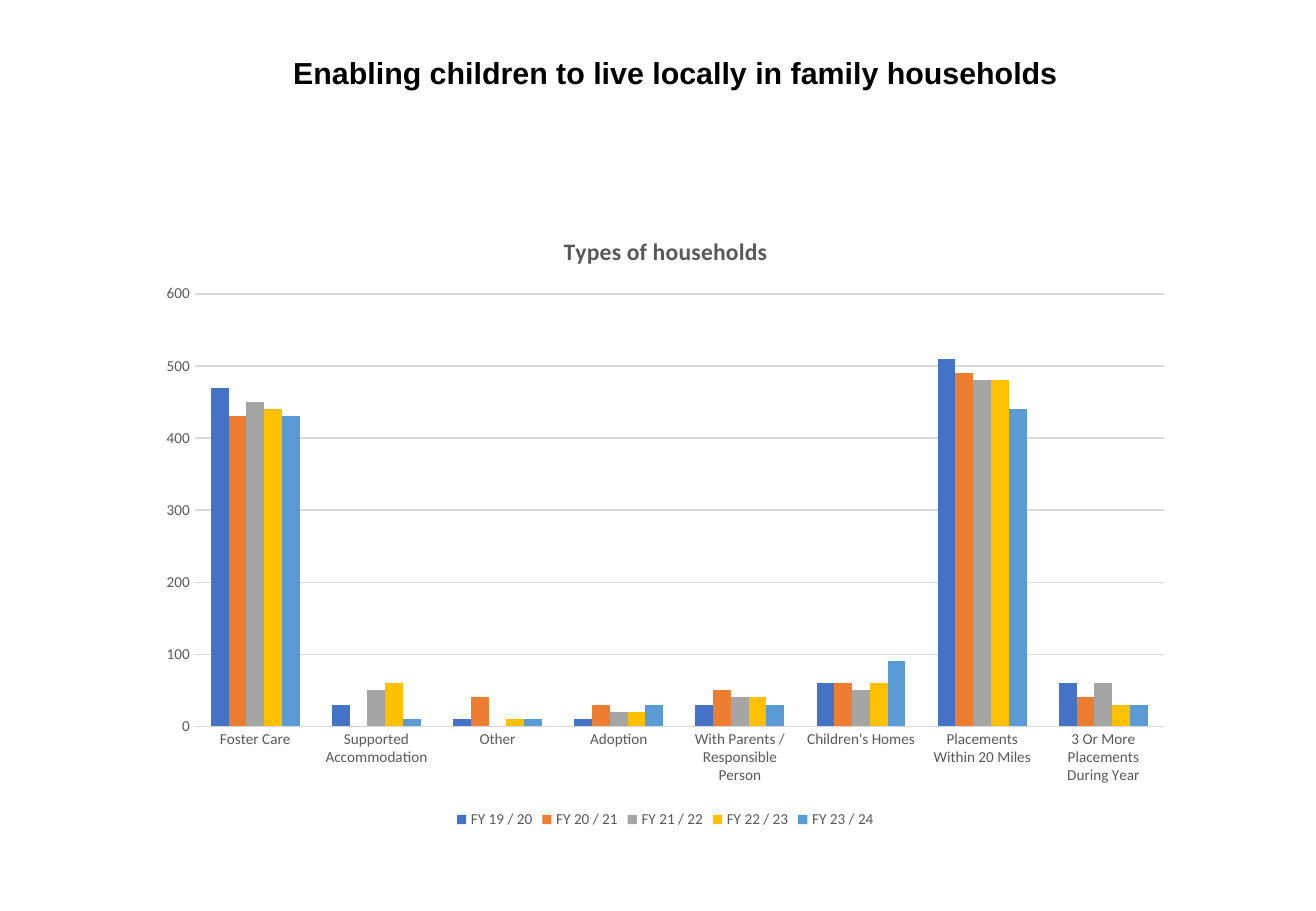
from dataclasses import dataclass

from pptx import Presentation
from pptx.chart.chart import Chart
from pptx.chart.data import CategoryChartData
from pptx.dml.color import RGBColor
from pptx.enum.chart import XL_CHART_TYPE, XL_LEGEND_POSITION, XL_TICK_MARK
from pptx.enum.text import MSO_ANCHOR, MSO_AUTO_SIZE, PP_ALIGN
from pptx.oxml import parse_xml
from pptx.oxml.ns import nsdecls, qn
from pptx.slide import Slide
from pptx.text.text import Font, TextFrame
from pptx.util import Inches, Pt

SLIDE_WIDTH = Inches(10.83)
SLIDE_HEIGHT = Inches(7.5)

BLACK = RGBColor(0x00, 0x00, 0x00)
GREY_TEXT = RGBColor(0x59, 0x59, 0x59)
GREY_LINE = RGBColor(0xD9, 0xD9, 0xD9)
BLUE = RGBColor(0x44, 0x72, 0xC4)
ORANGE = RGBColor(0xED, 0x7D, 0x31)
GREY = RGBColor(0xA5, 0xA5, 0xA5)
GOLD = RGBColor(0xFF, 0xC0, 0x00)
SKY = RGBColor(0x5B, 0x9B, 0xD5)


@dataclass(frozen=True)
class Area:
    left: float
    top: float
    width: float = 0
    height: float = 0

    def on_slide(self) -> tuple[int, int, int, int]:
        return (
            int(SLIDE_WIDTH * self.left / 100),
            int(SLIDE_HEIGHT * self.top / 100),
            int(SLIDE_WIDTH * self.width / 100),
            int(SLIDE_HEIGHT * self.height / 100),
        )


@dataclass(frozen=True)
class YearSeries:
    name: str
    color: RGBColor
    values: tuple[int, ...]


TITLE_AREA = Area(1.75, 5.33, 82.64, 5.33)
CHART_AREA = Area(11.08, 23.07, 78.95, 68.4)
CHART_TITLE_AREA = Area(39.8, 3.2)
PLOT_AREA = Area(4.7, 13.45, 93.3, 69.4)

HOUSEHOLDS = (
    "Foster Care",
    "Supported Accommodation",
    "Other",
    "Adoption",
    "With Parents / Responsible Person",
    "Children's Homes",
    "Placements Within 20 Miles",
    "3 Or More Placements During Year",
)
YEARS = (
    YearSeries("FY 19 / 20", BLUE, (470, 30, 10, 10, 30, 60, 510, 60)),
    YearSeries("FY 20 / 21", ORANGE, (430, 0, 40, 30, 50, 60, 490, 40)),
    YearSeries("FY 21 / 22", GREY, (450, 50, 0, 20, 40, 50, 480, 60)),
    YearSeries("FY 22 / 23", GOLD, (440, 60, 10, 20, 40, 60, 480, 30)),
    YearSeries("FY 23 / 24", SKY, (430, 10, 10, 30, 30, 90, 440, 30)),
)


def format_font(font: Font, *, name: str = "Calibri", size: float = 9,
                color: RGBColor = GREY_TEXT, bold: bool = False) -> None:
    font.name = name
    font.size = Pt(size)
    font.bold = bold
    font.color.rgb = color


def write_text(frame: TextFrame, text: str, *, name: str = "Calibri",
               size: float = 9, color: RGBColor = GREY_TEXT,
               bold: bool = False) -> None:
    para = frame.paragraphs[0]
    para.alignment = PP_ALIGN.CENTER
    span = para.add_run()
    span.text = text
    format_font(span.font, name=name, size=size, color=color, bold=bold)


def place_layout(parent, index: int, area: Area) -> None:
    for existing in parent.findall(qn("c:layout")):
        parent.remove(existing)
    shares = {"x": area.left, "y": area.top}
    target = ""
    if area.width:
        shares |= {"w": area.width, "h": area.height}
        target = '<c:layoutTarget val="inner"/>'
    sizes = "".join(f'<c:{key} val="{share / 100:.4f}"/>'
                    for key, share in shares.items())
    parent.insert(index, parse_xml(
        f'<c:layout {nsdecls("c")}><c:manualLayout>{target}'
        f'<c:xMode val="edge"/><c:yMode val="edge"/>{sizes}'
        "</c:manualLayout></c:layout>"
    ))


def add_title(slide: Slide) -> None:
    box = slide.shapes.title
    box.left, box.top, box.width, box.height = TITLE_AREA.on_slide()
    frame = box.text_frame
    frame.word_wrap = True
    frame.auto_size = MSO_AUTO_SIZE.SHAPE_TO_FIT_TEXT
    frame.vertical_anchor = MSO_ANCHOR.MIDDLE
    frame.margin_left = Inches(1.89)
    write_text(frame, "Enabling children to live locally in family households",
               name="Arial", size=18, color=BLACK, bold=True)


def format_axes(chart: Chart) -> None:
    for axis in (chart.category_axis, chart.value_axis):
        axis.major_tick_mark = XL_TICK_MARK.NONE
        axis.minor_tick_mark = XL_TICK_MARK.NONE
        format_font(axis.tick_labels.font)
    value_axis = chart.value_axis
    value_axis.minimum_scale = 0
    value_axis.maximum_scale = 600
    value_axis.major_unit = 100
    value_axis.tick_labels.number_format = "0"
    value_axis.tick_labels.number_format_is_linked = False
    value_axis.format.line.fill.background()
    value_axis.has_major_gridlines = True
    for line in (chart.category_axis.format.line,
                 value_axis.major_gridlines.format.line):
        line.color.rgb = GREY_LINE
        line.width = Pt(0.75)


def add_household_chart(slide: Slide) -> None:
    data = CategoryChartData(number_format="0")
    data.categories = HOUSEHOLDS
    for year in YEARS:
        data.add_series(year.name, year.values)
    chart = slide.shapes.add_chart(
        XL_CHART_TYPE.COLUMN_CLUSTERED, *CHART_AREA.on_slide(), data
    ).chart
    format_font(chart.font, size=10, color=BLACK)
    chart.has_title = True
    title = chart.chart_title
    write_text(title.text_frame, "Types of households", size=14, bold=True)
    place_layout(title.element, 1, CHART_TITLE_AREA)
    place_layout(chart.element.find(".//" + qn("c:plotArea")), 0, PLOT_AREA)
    format_axes(chart)
    chart.has_legend = True
    chart.legend.position = XL_LEGEND_POSITION.BOTTOM
    chart.legend.include_in_layout = False
    format_font(chart.legend.font)
    plot = chart.plots[0]
    plot.gap_width = 182
    plot.overlap = 0
    plot.vary_by_categories = False
    for series, year in zip(plot.series, YEARS):
        series.invert_if_negative = False
        series.format.fill.solid()
        series.format.fill.fore_color.rgb = year.color


def main() -> None:
    deck = Presentation()
    deck.slide_width = SLIDE_WIDTH
    deck.slide_height = SLIDE_HEIGHT
    slide = deck.slides.add_slide(deck.slide_layouts.get_by_name("Title Only"))
    add_title(slide)
    add_household_chart(slide)
    deck.save("out.pptx")


if __name__ == "__main__":
    main()
